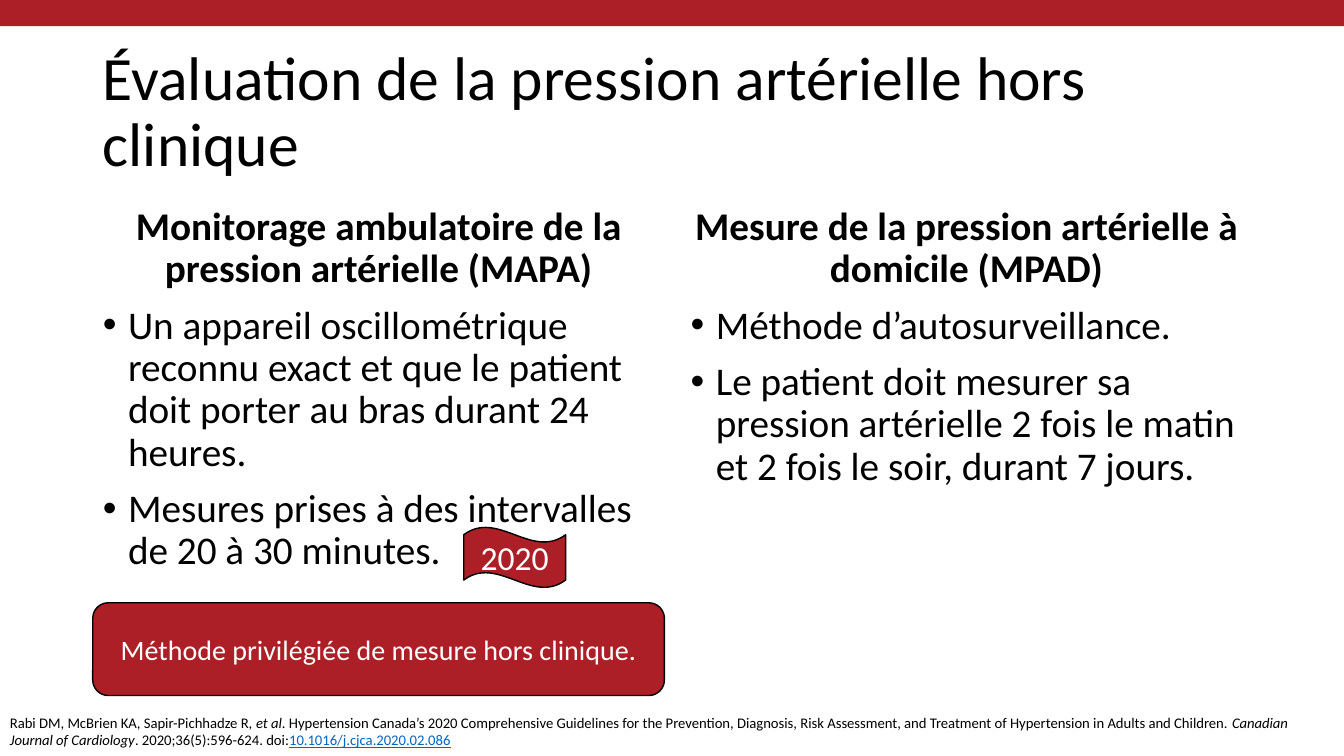
"""Build the slide on out-of-clinic blood pressure assessment."""
from lxml import etree
from pptx import Presentation
from pptx.dml.color import RGBColor
from pptx.enum import shapes, text
from pptx.oxml import ns
from pptx.util import Inches, Pt

RED = RGBColor(0xAD, 0x1F, 0x27)
BLACK = RGBColor(0, 0, 0)
WHITE = RGBColor(0xFF, 0xFF, 0xFF)
LINK_BLUE = RGBColor(0x05, 0x63, 0xC1)


def add_span(para, words, size, color=BLACK, bold=False, italic=False):
    span = para.add_run()
    span.text = words
    font = span.font
    font.name, font.size = "Calibri", Pt(size)
    font.bold, font.italic = bold, italic
    font.color.rgb = color
    return span


def add_red_shape(kind, left, top, width, height, words="", size=20):
    shape = page.shapes.add_shape(
        kind, Inches(left), Inches(top), Inches(width), Inches(height))
    shape.shadow.inherit = False
    shape.fill.solid()
    shape.fill.fore_color.rgb = RED
    if words:
        shape.line.color.rgb = BLACK
        shape.line.width = Pt(1)
        shape.text_frame.vertical_anchor = text.MSO_ANCHOR.MIDDLE
        para = shape.text_frame.paragraphs[0]
        para.alignment = text.PP_ALIGN.CENTER
        add_span(para, words, size, WHITE)
    else:
        shape.line.fill.background()


deck = Presentation()
deck.slide_width, deck.slide_height = Inches(13.33), Inches(7.5)
page = deck.slides.add_slide(deck.slide_layouts.get_by_name("Two Content"))

add_red_shape(shapes.MSO_SHAPE.RECTANGLE, 0, 0, 13.33, 0.26)

title = page.shapes.title
title.left, title.top = Inches(0.92), Inches(0.4)
title.width, title.height = Inches(10.3), Inches(1.45)
title.text_frame.auto_size = text.MSO_AUTO_SIZE.NONE
title.text_frame.vertical_anchor = text.MSO_ANCHOR.MIDDLE
heading = title.text_frame.paragraphs[0]
heading.alignment = text.PP_ALIGN.LEFT
heading.line_spacing = 0.9
add_span(heading, "Évaluation de la pression artérielle hors clinique", 44)

columns = [
    (1, 0.92, [
        "Monitorage ambulatoire de la pression artérielle (MAPA)",
        "Un appareil oscillométrique reconnu exact et que le patient doit porter au bras durant 24 heures.",
        "Mesures prises à des intervalles de 20 à 30 minutes.",
    ]),
    (2, 6.75, [
        "Mesure de la pression artérielle à domicile (MPAD)",
        "Méthode d’autosurveillance.",
        "Le patient doit mesurer sa pression artérielle 2 fois le matin et 2 fois le soir, durant 7 jours.",
    ]),
]
for index, left, lines in columns:
    body = page.placeholders[index]
    body.left, body.top = Inches(left), Inches(2)
    body.width, body.height = Inches(5.67), Inches(4.76)
    frame = body.text_frame
    frame.auto_size = text.MSO_AUTO_SIZE.NONE
    for row, words in enumerate(lines):
        is_heading = row == 0
        para = frame.paragraphs[0] if is_heading else frame.add_paragraph()
        props = para._p.get_or_add_pPr()
        indent = 0 if is_heading else Inches(0.25)
        props.set("marL", str(indent))
        props.set("indent", str(-indent))
        if is_heading:
            etree.SubElement(props, ns.qn("a:buNone"))
        else:
            etree.SubElement(props, ns.qn("a:buFont"), typeface="Arial")
            etree.SubElement(props, ns.qn("a:buChar"), char="•")
        para.alignment = text.PP_ALIGN.CENTER if is_heading else text.PP_ALIGN.LEFT
        para.line_spacing = 0.9
        para.space_before = Pt(0 if is_heading else 10)
        add_span(para, words, 28, bold=is_heading)

add_red_shape(shapes.MSO_SHAPE.ROUNDED_RECTANGLE, 0.92, 5.98, 5.67, 0.92,
              "Méthode privilégiée de mesure hors clinique.")

citation = page.shapes.add_textbox(Inches(0), Inches(7.03), Inches(13.33), Inches(0.45))
citation.text_frame.word_wrap = True
reference = citation.text_frame.paragraphs[0]
citation_parts = [
    ("Rabi DM, McBrien KA, Sapir-Pichhadze R, ", False),
    ("et al", True),
    (". Hypertension Canada’s 2020 Comprehensive Guidelines for the Prevention, Diagnosis, "
     "Risk Assessment, and Treatment of Hypertension in Adults and Children. ", False),
    ("Canadian Journal of Cardiology", True),
    (". 2020;36(5):596-624. doi:", False),
]
for words, italic in citation_parts:
    add_span(reference, words, 10.5, italic=italic)
doi = add_span(reference, "10.1016/j.cjca.2020.02.086", 10.5, LINK_BLUE)
doi.font.underline = True

add_red_shape(shapes.MSO_SHAPE.WAVE, 4.6, 5.23, 1.01, 0.6, "2020", 24)

deck.save("out.pptx")
